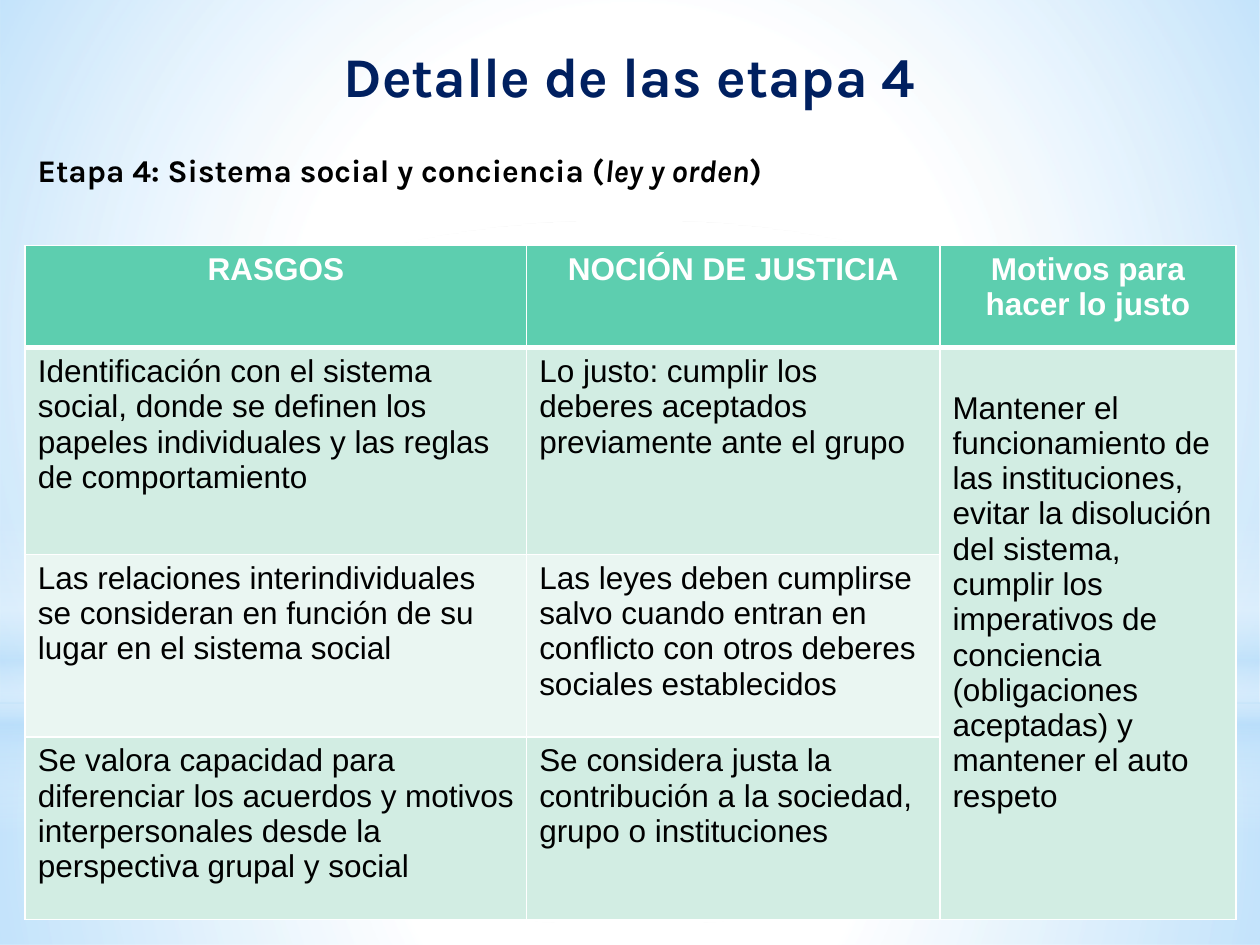
from lxml import etree
from pptx import Presentation
from pptx.dml.color import RGBColor
from pptx.enum.shapes import MSO_SHAPE
from pptx.enum.text import MSO_ANCHOR, PP_ALIGN
from pptx.oxml import parse_xml
from pptx.oxml.ns import nsdecls, qn
from pptx.util import Inches, Pt

RECT, OVAL = MSO_SHAPE.RECTANGLE, MSO_SHAPE.OVAL
LEFT, CENTER, TOP = PP_ALIGN.LEFT, PP_ALIGN.CENTER, MSO_ANCHOR.TOP
HUES = {"white": "FFFFFF", "sky": "B4DCFA", "head": "5DCEAF", "odd": "D2EDE3",
        "even": "EAF6F2", "navy": "002060", "black": "000000"}
HEAD = {"size": Pt(18), "name": "Arial", "bold": True, "hue": "white"}
BODY = {"size": Pt(18), "name": "Arial", "bold": False, "hue": "black"}
TITLE = {"size": Pt(32), "name": "Karla", "bold": True, "hue": "navy"}
LEAD = {"size": Pt(18), "name": "Karla", "bold": True, "hue": "black"}
RADIAL = ('<a:path path="circle"><a:fillToRect l="50000" t="50000" '
          'r="50000" b="50000"/></a:path>')
LINEAR = '<a:lin ang="5400000" scaled="0"/>'
GLOWS = [
    (RECT, (0, 5.58, 10, 1.92), RADIAL,
     [(0, "white", 91), (37, "white", 76), (100, "sky", 79)]),
    (RECT, (0, 0, 10, 5.58), RADIAL,
     [(0, "white", 89), (48, "white", 62), (100, "sky", 79)]),
    (RECT, (0, 4.12, 10, 2.5), LINEAR,
     [(0, "white", 0), (29, "white", 30), (45, "sky", 40),
      (55, "white", 26), (65, "sky", 60), (100, "white", 0)]),
    (OVAL, (0, 1.75, 10, 5.58), RADIAL,
     [(0, "white", 100), (56, "white", 0)]),
]
COLS = [3.98, 3.28, 2.35]
ROWS = [0.81, 1.64, 1.45, 1.45]
CELLS = [
    ["RASGOS", "NOCIÓN DE JUSTICIA", "Motivos para hacer lo justo"],
    ["Identificación con el sistema social, donde se definen los papeles "
     "individuales y las reglas de comportamiento",
     "Lo justo: cumplir los deberes aceptados previamente ante el grupo",
     "Mantener el funcionamiento de las instituciones, evitar la disolución "
     "del sistema, cumplir los imperativos de conciencia (obligaciones "
     "aceptadas) y mantener el auto respeto"],
    ["Las relaciones interindividuales se consideran en función de su lugar "
     "en el sistema social",
     "Las leyes deben cumplirse salvo cuando entran en conflicto con otros "
     "deberes sociales establecidos"],
    ["Se valora capacidad para diferenciar los acuerdos y motivos "
     "interpersonales desde la perspectiva grupal y social",
     "Se considera justa la contribución a la sociedad, grupo o instituciones"],
]


def color(hue):
    return RGBColor.from_string(HUES[hue])


def add_run(para, text, style, **more):
    run = para.add_run()
    run.text = text
    for key, value in {**style, **more}.items():
        if key == "hue":
            run.font.color.rgb = color(value)
        else:
            setattr(run.font, key, value)


def add_glow(slide, kind, box, path, stops):
    shape = slide.shapes.add_shape(kind, *map(Inches, box))
    shape.shadow.inherit = False
    shape.line.fill.background()
    marks = "".join(
        f'<a:gs pos="{pos * 1000}"><a:srgbClr val="{HUES[hue]}">'
        f'<a:alpha val="{alpha * 1000}"/></a:srgbClr></a:gs>'
        for pos, hue, alpha in stops)
    grad = parse_xml(f'<a:gradFill {nsdecls("a")} rotWithShape="1">'
                     f'<a:gsLst>{marks}</a:gsLst>{path}</a:gradFill>')
    props = shape.fill._xPr
    props.find(qn("a:prstGeom")).addnext(grad)


def add_text(slide, box, align, parts, style):
    frame = slide.shapes.add_textbox(*map(Inches, box)).text_frame
    frame.word_wrap = True
    para = frame.paragraphs[0]
    para.alignment = align
    for text, slant in parts:
        add_run(para, text, style, italic=slant)


def add_edges(cell, row):
    props = cell._tc.get_or_add_tcPr()
    wide = {"T": row == 1, "B": row == 0}
    for side in "LRTB":
        width = Pt(3 if wide.get(side) else 1)
        line = etree.SubElement(props, qn(f"a:ln{side}"), w=str(width))
        fill = etree.SubElement(line, qn("a:solidFill"))
        etree.SubElement(fill, qn("a:srgbClr"), val=HUES["white"])


def add_grid(slide, left, top):
    box = map(Inches, (left, top, sum(COLS), sum(ROWS)))
    grid = slide.shapes.add_table(len(ROWS), len(COLS), *box).table
    grid.horz_banding = False
    for col, width in zip(grid.columns, COLS):
        col.width = Inches(width)
    for row, height in zip(grid.rows, ROWS):
        row.height = Inches(height)
    grid.cell(1, 2).merge(grid.cell(3, 2))
    for r, texts in enumerate(CELLS):
        for c, text in enumerate(texts):
            cell = grid.cell(r, c)
            add_edges(cell, r)
            cell.fill.solid()
            hue = "head" if r == 0 else "odd" if r % 2 else "even"
            cell.fill.fore_color.rgb = color(hue)
            cell.vertical_anchor = TOP
            para = cell.text_frame.paragraphs[0]
            para.alignment = LEFT if r else CENTER
            add_run(para, text, BODY if r else HEAD)
    grid.cell(1, 2).margin_top = Inches(0.34)


def main():
    deck = Presentation()
    deck.slide_width, deck.slide_height = Inches(10), Inches(7.5)
    slide = deck.slides.add_slide(deck.slide_layouts[6])
    slide.background.fill.solid()
    slide.background.fill.fore_color.rgb = color("white")
    for glow in GLOWS:
        add_glow(slide, *glow)
    add_grid(slide, 0.2, 1.95)
    add_text(slide, (0, 0.28, 10, 0.64), CENTER,
             [("Detalle de las etapa 4", False)], TITLE)
    add_text(slide, (0.2, 1.15, 6.38, 0.4), LEFT,
             [("Etapa 4: Sistema social y conciencia (", False),
              ("ley y orden", True), (")", False)], LEAD)
    deck.save("out.pptx")


if __name__ == "__main__":
    main()
